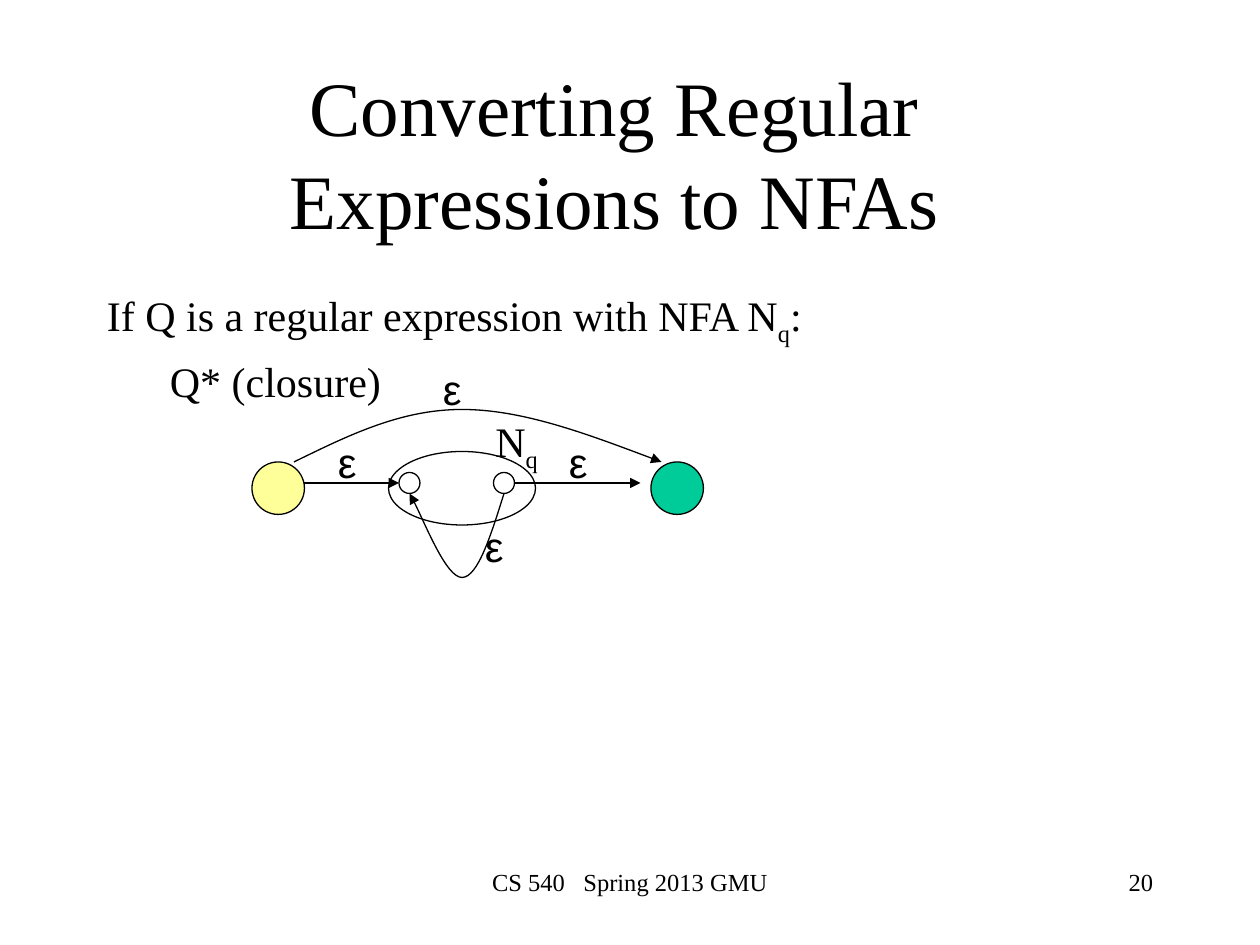
import dataclasses

import pptx
import pptx.dml.color
import pptx.enum.shapes
import pptx.enum.text
import pptx.oxml.ns
import pptx.oxml.xmlchemy
import pptx.util

PX = 914400 // 96
ALIGN = pptx.enum.text.PP_ALIGN
ANCHOR = pptx.enum.text.MSO_ANCHOR
qn = pptx.oxml.ns.qn
new_element = pptx.oxml.xmlchemy.OxmlElement


@dataclasses.dataclass(frozen=True)
class Theme:
    ink: str = "000000"
    start_state: str = "FFFF99"
    final_state: str = "00CC99"
    serif: str = "Times New Roman"
    sans: str = "Arial"
    title_size: int = 44
    body_size: int = 24
    footer_size: int = 14
    line_width: float = 0.75
    paragraph_gap: float = 4.8


def rgb(value):
    return pptx.dml.color.RGBColor.from_string(value)


class SlideBuilder:
    def __init__(self, slide, theme):
        self.shapes = slide.shapes
        self.theme = theme

    def text_box(self, left, top, width, height, anchor=ANCHOR.TOP, wrap=True):
        box = self.shapes.add_textbox(left * PX, top * PX, width * PX, height * PX)
        frame = box.text_frame
        frame.word_wrap = wrap
        frame.vertical_anchor = anchor
        if not wrap:
            frame.auto_size = pptx.enum.text.MSO_AUTO_SIZE.SHAPE_TO_FIT_TEXT
        return frame

    def add_runs(self, paragraph, pieces, size, font=None, align=ALIGN.LEFT):
        """Add the pieces as runs; every second piece is a subscript."""
        paragraph.alignment = align
        for index, piece in enumerate(pieces):
            run = paragraph.add_run()
            run.text = piece
            run.font.name = font or self.theme.serif
            run.font.size = pptx.util.Pt(size)
            run.font.color.rgb = rgb(self.theme.ink)
            if index % 2:
                run.font._element.set("baseline", "-25000")

    def label(self, left, top, width, pieces, font=None):
        frame = self.text_box(left, top, width, 48, wrap=False)
        self.add_runs(frame.paragraphs[0], pieces, self.theme.body_size, font)

    def body(self, left, top, width, height, items):
        """Add (margin, hanging indent, pieces) items as paragraphs."""
        frame = self.text_box(left, top, width, height)
        for index, (margin, hanging, pieces) in enumerate(items):
            paragraph = frame.add_paragraph() if index else frame.paragraphs[0]
            if index:
                paragraph.space_before = pptx.util.Pt(self.theme.paragraph_gap)
            properties = paragraph._p.get_or_add_pPr()
            properties.set("marL", str(margin * PX))
            properties.set("indent", str(-hanging * PX))
            self.add_runs(paragraph, pieces, self.theme.body_size)

    def outline(self, shape, arrow=False):
        shape.line.color.rgb = rgb(self.theme.ink)
        shape.line.width = pptx.util.Pt(self.theme.line_width)
        if arrow:
            tail = new_element("a:tailEnd")
            tail.set("type", "triangle")
            shape.line._get_or_add_ln().append(tail)

    def ellipse(self, left, top, width, height, fill=None):
        oval = pptx.enum.shapes.MSO_SHAPE.OVAL
        shape = self.shapes.add_shape(oval, left * PX, top * PX, width * PX, height * PX)
        shape.shadow.inherit = False
        if fill:
            shape.fill.solid()
            shape.fill.fore_color.rgb = rgb(fill)
        else:
            shape.fill.background()
        self.outline(shape)

    def arrow(self, start_x, end_x, y):
        straight = pptx.enum.shapes.MSO_CONNECTOR.STRAIGHT
        line = self.shapes.add_connector(straight, start_x * PX, y * PX, end_x * PX, y * PX)
        self.outline(line, arrow=True)
        line._element.spPr.append(new_element("a:effectLst"))

    def curved_arrow(self, start, controls):
        """Draw Bezier segments; each takes three points from controls."""
        builder = self.shapes.build_freeform(*start, scale=PX)
        builder.add_line_segments(controls, close=False)
        shape = builder.convert_to_shape()
        shape.shadow.inherit = False
        shape.fill.background()
        self.outline(shape, arrow=True)
        curve_outline = next(shape._element.iter(qn("a:path")))
        segments = curve_outline.findall(qn("a:lnTo"))
        for first in range(0, len(segments), 3):
            curve = new_element("a:cubicBezTo")
            for segment in segments[first:first + 3]:
                curve.append(segment[0])
                curve_outline.remove(segment)
            curve_outline.append(curve)


def main():
    theme = Theme()
    presentation = pptx.Presentation()
    presentation.slide_width = 960 * PX
    presentation.slide_height = 720 * PX
    slide = presentation.slides.add_slide(presentation.slide_layouts[6])
    builder = SlideBuilder(slide, theme)

    footer = builder.text_box(328, 656, 304, 48)
    builder.add_runs(footer.paragraphs[0], ["CS 540   Spring 2013 GMU"],
                     theme.footer_size, align=ALIGN.CENTER)
    number = builder.text_box(688, 656, 200, 48)
    builder.add_runs(number.paragraphs[0], ["20"], theme.footer_size, align=ALIGN.RIGHT)
    title = builder.text_box(80, 64, 776, 104, anchor=ANCHOR.MIDDLE)
    builder.add_runs(title.paragraphs[0], ["Converting Regular Expressions to NFAs"],
                     theme.title_size, align=ALIGN.CENTER)
    builder.body(72, 216, 816, 432, [
        (64, 64, ["If Q is a regular expression with NFA N", "q", ":"]),
        (104, 56, ["Q* (closure)"]),
    ])

    builder.ellipse(296, 344, 112, 56)
    builder.label(368, 312, 53, ["N", "q"])
    for left in (376, 304):
        builder.ellipse(left, 360, 16, 16)
    for left, fill in ((192, theme.start_state), (496, theme.final_state)):
        builder.ellipse(left, 352, 40, 40, fill)
    for left, top in ((248, 328), (424, 328), (360, 392), (328, 272)):
        builder.label(left, top, 34, ["ε"], theme.sans)

    for start_x, end_x in ((392, 488), (232, 304)):
        builder.arrow(start_x, end_x, 368)
    builder.curved_arrow((224, 352), [(265, 332), (305, 312), (352, 312),
                                      (398, 312), (451, 332), (504, 352)])
    builder.curved_arrow((384, 376), [(374, 408), (364, 440), (352, 440),
                                      (340, 440), (319, 387), (312, 376)])
    presentation.save("out.pptx")


if __name__ == "__main__":
    main()
